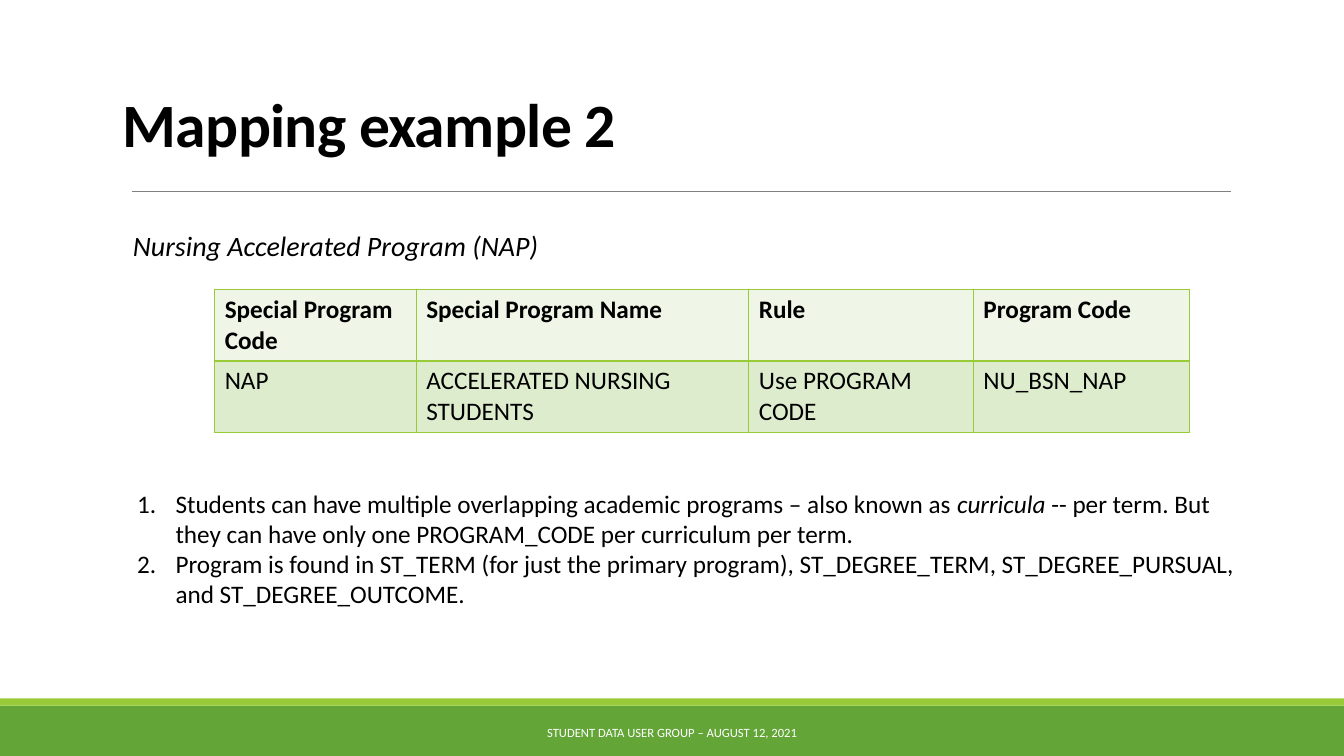
from dataclasses import dataclass

from lxml import etree
from pptx import Presentation
from pptx.dml.color import RGBColor
from pptx.enum.dml import MSO_THEME_COLOR
from pptx.enum.shapes import MSO_CONNECTOR, MSO_SHAPE
from pptx.enum.text import MSO_ANCHOR, MSO_AUTO_SIZE, PP_ALIGN
from pptx.oxml.ns import qn
from pptx.util import Cm, Pt

RECTANGLE = MSO_SHAPE.RECTANGLE
STRAIGHT = MSO_CONNECTOR.STRAIGHT
TOP, MIDDLE, BOTTOM = MSO_ANCHOR.TOP, MSO_ANCHOR.MIDDLE, MSO_ANCHOR.BOTTOM
LEFT, CENTER = PP_ALIGN.LEFT, PP_ALIGN.CENTER
NO_RESIZE = MSO_AUTO_SIZE.NONE
ACCENT_1, ACCENT_2 = MSO_THEME_COLOR.ACCENT_1, MSO_THEME_COLOR.ACCENT_2


@dataclass(frozen=True)
class Theme:
    font: str = "Calibri"
    ink: str = "000000"
    white: str = "FFFFFF"
    green: str = "63A537"
    lime: str = "99CB38"
    rule: str = "808080"
    header_fill: str = "EFF6E8"
    row_fill: str = "DEECCE"
    title_size: int = 44
    subtitle_size: int = 20
    body_size: int = 18
    footer_size: int = 9


@dataclass(frozen=True)
class Area:
    left: float
    top: float
    width: float
    height: float

    def lengths(self) -> tuple:
        return Cm(self.left), Cm(self.top), Cm(self.width), Cm(self.height)


@dataclass(frozen=True)
class Band:
    area: Area
    color: str


@dataclass(frozen=True)
class Span:
    text: str
    italic: bool = False


@dataclass(frozen=True)
class Row:
    texts: tuple
    fill: str
    bold: bool


THEME = Theme()
SLIDE_WIDTH, SLIDE_HEIGHT = 33.87, 19.05
BANDS = (
    Band(Area(0, 17.78, SLIDE_WIDTH, 1.27), THEME.green),
    Band(Area(0, 17.6, SLIDE_WIDTH, 0.18), THEME.lime),
)
TITLE_AREA = Area(2.84, 2.39, 31.24, 1.78)
SUBTITLE_AREA = Area(3.1, 5.64, 17.04, 1.12)
LIST_AREA = Area(3.2, 12.17, 28.68, 3.33)
FOOTER_AREA = Area(10.24, 17.96, 13.39, 1.02)
TABLE_LEFT, TABLE_TOP, ROW_HEIGHT = 5.41, 7.29, 1.78
COLUMN_WIDTHS = (5.08, 8.38, 5.66, 5.44)
LIST_INDENT = 0.97
ROWS = (
    Row(("Special Program Code", "Special Program Name", "Rule", "Program Code"),
        THEME.header_fill, True),
    Row(("NAP", "ACCELERATED NURSING STUDENTS", "Use PROGRAM CODE", "NU_BSN_NAP"),
        THEME.row_fill, False),
)
NOTES = (
    (
        Span("Students can have multiple overlapping academic programs – also known as "),
        Span("curricula", italic=True),
        Span(" -- per term. But they can have only one PROGRAM_CODE per curriculum per term."),
    ),
    (
        Span("Program is found in ST_TERM (for just the primary program), ST_DEGREE_TERM, "
             "ST_DEGREE_PURSUAL, and ST_DEGREE_OUTCOME."),
    ),
)


def rgb(color: str) -> RGBColor:
    return RGBColor.from_string(color)


def apply(target, formats: dict) -> None:
    for name, value in formats.items():
        setattr(target, name, value)


def add_span(para, text: str, size: int, color: str = THEME.ink,
             bold: bool = False, italic: bool = False):
    span = para.add_run()
    span.text = text
    apply(span.font, {"name": THEME.font, "size": Pt(size), "bold": bold, "italic": italic})
    span.font.color.rgb = rgb(color)
    return span


def place(box, area: Area, anchor):
    left, top, width, height = area.lengths()
    apply(box, {"left": left, "top": top, "width": width, "height": height})
    apply(box.text_frame, {"word_wrap": True, "auto_size": NO_RESIZE, "vertical_anchor": anchor})
    return box.text_frame


def add_band(page, band: Band) -> None:
    box = page.shapes.add_shape(RECTANGLE, *band.area.lengths())
    box.shadow.inherit = False
    box.fill.solid()
    box.fill.fore_color.rgb = rgb(band.color)
    box.line.fill.background()


def add_rule(page) -> None:
    rule = page.shapes.add_connector(STRAIGHT, Cm(3.33), Cm(4.83), Cm(31.01), Cm(4.83))
    rule.line.color.rgb = rgb(THEME.rule)
    rule.line.width = Pt(0.5)
    etree.SubElement(rule._element.spPr, qn("a:effectLst"))


def add_label(page, area: Area, anchor, align, text: str, **formats) -> None:
    frame = place(page.shapes.add_textbox(*area.lengths()), area, anchor)
    para = frame.paragraphs[0]
    para.alignment = align
    add_span(para, text, **formats)


def fill_title(page) -> None:
    para = place(page.shapes.title, TITLE_AREA, BOTTOM).paragraphs[0]
    apply(para, {"alignment": LEFT, "line_spacing": 0.85})
    span = add_span(para, "Mapping example 2", THEME.title_size, bold=True)
    span.font._element.set("spc", "-50")


def fill_list(page) -> None:
    frame = place(page.placeholders[1], LIST_AREA, TOP)
    for index, note in enumerate(NOTES):
        para = frame.add_paragraph() if index else frame.paragraphs[0]
        apply(para, {"alignment": LEFT, "space_before": Pt(0)})
        properties = para._p.get_or_add_pPr()
        properties.set("marL", str(Cm(LIST_INDENT)))
        properties.set("indent", str(-Cm(LIST_INDENT)))
        etree.SubElement(properties, qn("a:buFont"), typeface="+mj-lt")
        etree.SubElement(properties, qn("a:buAutoNum"), type="arabicPeriod")
        for span in note:
            add_span(para, span.text, THEME.body_size, italic=span.italic)


def add_borders(cell) -> None:
    properties = cell._tc.get_or_add_tcPr()
    for side in ("a:lnL", "a:lnR", "a:lnT", "a:lnB"):
        line = etree.SubElement(properties, qn(side), w=str(Pt(1)))
        fill = etree.SubElement(line, qn("a:solidFill"))
        etree.SubElement(fill, qn("a:srgbClr"), val=THEME.lime)


def add_program_table(page) -> None:
    area = Area(TABLE_LEFT, TABLE_TOP, sum(COLUMN_WIDTHS), ROW_HEIGHT * len(ROWS))
    table = page.shapes.add_table(len(ROWS), len(COLUMN_WIDTHS), *area.lengths()).table
    table.horz_banding = False
    for column, width in zip(table.columns, COLUMN_WIDTHS):
        column.width = Cm(width)
    for table_row, row in zip(table.rows, ROWS):
        table_row.height = Cm(ROW_HEIGHT)
        for cell, text in zip(table_row.cells, row.texts):
            add_borders(cell)
            cell.fill.solid()
            cell.fill.fore_color.rgb = rgb(row.fill)
            add_span(cell.text_frame.paragraphs[0], text, THEME.body_size, bold=row.bold)


def main() -> None:
    deck = Presentation()
    apply(deck, {"slide_width": Cm(SLIDE_WIDTH), "slide_height": Cm(SLIDE_HEIGHT)})
    page = deck.slides.add_slide(deck.slide_layouts[1])
    for band in BANDS:
        add_band(page, band)
    add_rule(page)
    add_label(page, FOOTER_AREA, MIDDLE, CENTER, "STUDENT DATA USER GROUP – AUGUST 12, 2021",
              size=THEME.footer_size, color=THEME.white)
    fill_title(page)
    add_label(page, SUBTITLE_AREA, TOP, LEFT, "Nursing Accelerated Program (NAP)",
              size=THEME.subtitle_size, italic=True)
    fill_list(page)
    add_program_table(page)
    deck.save("out.pptx")


if __name__ == "__main__":
    main()
